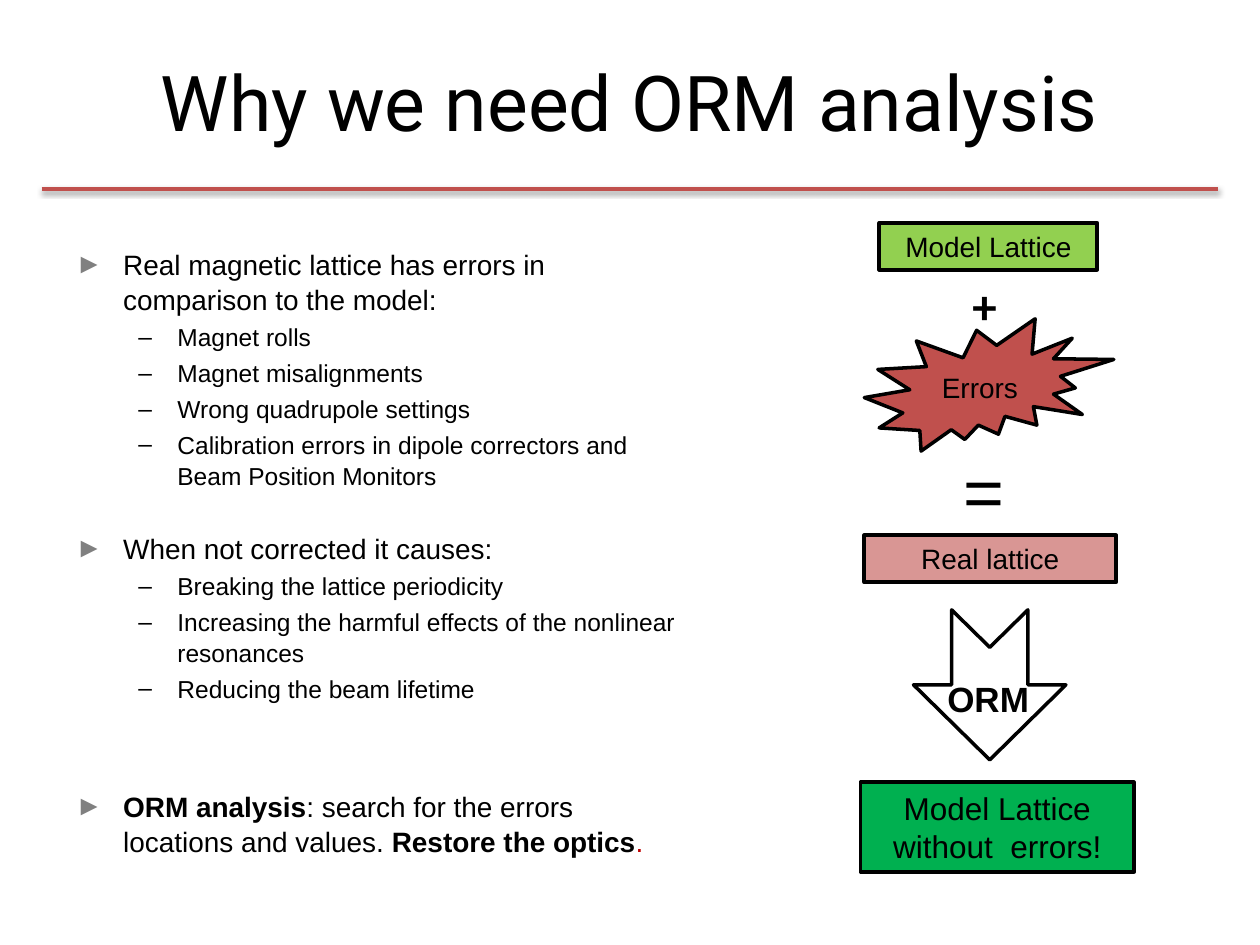
from lxml import etree
from pptx import Presentation
from pptx.dml.color import RGBColor
from pptx.enum.shapes import MSO_CONNECTOR, MSO_SHAPE
from pptx.enum.text import MSO_ANCHOR, PP_ALIGN
from pptx.oxml.ns import qn
from pptx.util import Inches, Pt

STRAIGHT = MSO_CONNECTOR.STRAIGHT
RECTANGLE = MSO_SHAPE.RECTANGLE
BURST = MSO_SHAPE.EXPLOSION2
NOTCHED_ARROW = MSO_SHAPE.NOTCHED_RIGHT_ARROW
CENTER, LEFT = PP_ALIGN.CENTER, PP_ALIGN.LEFT
MIDDLE, TOP = MSO_ANCHOR.MIDDLE, MSO_ANCHOR.TOP

BLACK, RED, GRAY, DOT_RED = "000000", "C0504D", "808080", "C00000"
LINE_SPACING = 1.05

TOPICS = [
    (3.2, [("Real magnetic lattice has errors in comparison to the model:", False, BLACK)],
     ["Magnet rolls", "Magnet misalignments", "Wrong quadrupole settings",
      "Calibration errors in dipole correctors and Beam Position Monitors"]),
    (22.8, [("When not corrected it causes:", False, BLACK)],
     ["Breaking the lattice periodicity",
      "Increasing the harmful effects of the nonlinear resonances",
      "Reducing the beam lifetime"]),
    (48.2, [("ORM analysis", True, BLACK),
            (": search for the errors locations and values. ", False, BLACK),
            ("Restore the optics", True, BLACK),
            (".", False, DOT_RED)], []),
]


def color(value):
    return RGBColor.from_string(value)


def add_run(paragraph, text, size, font="Arial", bold=False, tint=BLACK):
    run = paragraph.add_run()
    run.text = text
    run.font.size = Pt(size)
    run.font.name = font
    run.font.bold = bold
    run.font.color.rgb = color(tint)


def add_label(slide, box, text, size, font="Arial", bold=False,
              align=LEFT, anchor=TOP, wrap=False):
    label = slide.shapes.add_textbox(*map(Inches, box))
    frame = label.text_frame
    frame.word_wrap = wrap
    frame.vertical_anchor = anchor
    frame.paragraphs[0].alignment = align
    add_run(frame.paragraphs[0], text, size, font, bold)


def add_block(slide, kind, box, fill, width, text="", size=16):
    block = slide.shapes.add_shape(kind, *map(Inches, box))
    block.shadow.inherit = False
    if fill:
        block.fill.solid()
        block.fill.fore_color.rgb = color(fill)
    else:
        block.fill.background()
    block.line.color.rgb = color(BLACK)
    block.line.width = Pt(width)
    if text:
        frame = block.text_frame
        frame.word_wrap = True
        frame.vertical_anchor = MIDDLE
        frame.paragraphs[0].alignment = CENTER
        add_run(frame.paragraphs[0], text, size)
    return block


def set_bullet(paragraph, symbol, margin, indent, tint):
    props = paragraph._p.get_or_add_pPr()
    props.set("marL", str(Inches(margin)))
    props.set("indent", str(Inches(-indent)))
    bullet_color = etree.SubElement(props, qn("a:buClr"))
    etree.SubElement(bullet_color, qn("a:srgbClr"), val=tint)
    etree.SubElement(props, qn("a:buFont"), typeface="Arial")
    etree.SubElement(props, qn("a:buChar"), char=symbol)


def add_header(slide, left, top, width, height):
    add_label(slide, (left, top, width, height), "Why we need ORM analysis", 44,
              "Roboto", align=CENTER, anchor=MIDDLE, wrap=True)
    rule_y = Inches(1.5)
    rule = slide.shapes.add_connector(STRAIGHT, Inches(0.33), rule_y, Inches(9.67), rule_y)
    rule.line.color.rgb = color(RED)
    rule.line.width = Pt(2)
    effects = etree.SubElement(rule._element.spPr, qn("a:effectLst"))
    shadow = etree.SubElement(effects, qn("a:outerShdw"), blurRad=str(Pt(3.1)),
                              dist=str(Pt(1.6)), dir="5400000", rotWithShape="0")
    shade = etree.SubElement(shadow, qn("a:srgbClr"), val=BLACK)
    etree.SubElement(shade, qn("a:alpha"), val="38000")


def add_topics(slide, left, top, width, height):
    frame = slide.shapes.add_textbox(*map(Inches, (left, top, width, height))).text_frame
    frame.word_wrap = True

    def add_item(runs, size, space, bullet):
        first = frame.paragraphs[0]
        item = frame.add_paragraph() if first.runs else first
        item.line_spacing = LINE_SPACING
        item.space_before = Pt(space)
        set_bullet(item, *bullet)
        for text, bold, tint in runs:
            add_run(item, text, size, bold=bold, tint=tint)

    for space, heading, points in TOPICS:
        add_item(heading, 16, space, ("►", 0.38, 0.38, GRAY))
        for point in points:
            add_item([(point, False, BLACK)], 14, 2.8, ("–", 0.81, 0.31, BLACK))


def add_flow(slide, left, top):
    def place(x, y, width, height):
        return left + x, top + y, width, height

    add_label(slide, place(0.79, 0.37, 0.4, 0.57), "+", 28, "Calibri", True)
    add_block(slide, BURST, place(0.03, 0.76, 1.98, 1.05), RED, 2, "Errors")
    add_block(slide, RECTANGLE, place(0.15, 0, 1.73, 0.37), "92D050", 2.25, "Model Lattice")
    add_block(slide, RECTANGLE, place(0.03, 2.48, 2, 0.37), "D99694", 2.25, "Real lattice")
    add_block(slide, RECTANGLE, place(0, 4.44, 2.17, 0.71), "00B050", 2.25,
              "Model Lattice without  errors!", 18)
    add_label(slide, place(0.72, 1.73, 0.53, 0.77), "=", 40)
    arrow = add_block(slide, NOTCHED_ARROW, place(0.43, 3.06, 1.19, 1.21), None, 2)
    arrow.rotation = 90
    add_label(slide, place(0.59, 3.56, 0.86, 0.44), "ORM", 20, bold=True)


def main():
    deck = Presentation()
    deck.slide_width, deck.slide_height = Inches(10), Inches(7.5)
    slide = deck.slides.add_slide(deck.slide_layouts[6])
    add_header(slide, 0.5, 0.17, 9, 1.25)
    add_topics(slide, 0.5, 1.9, 5, 4.93)
    add_flow(slide, 6.83, 1.77)
    deck.save("out.pptx")


if __name__ == "__main__":
    main()
